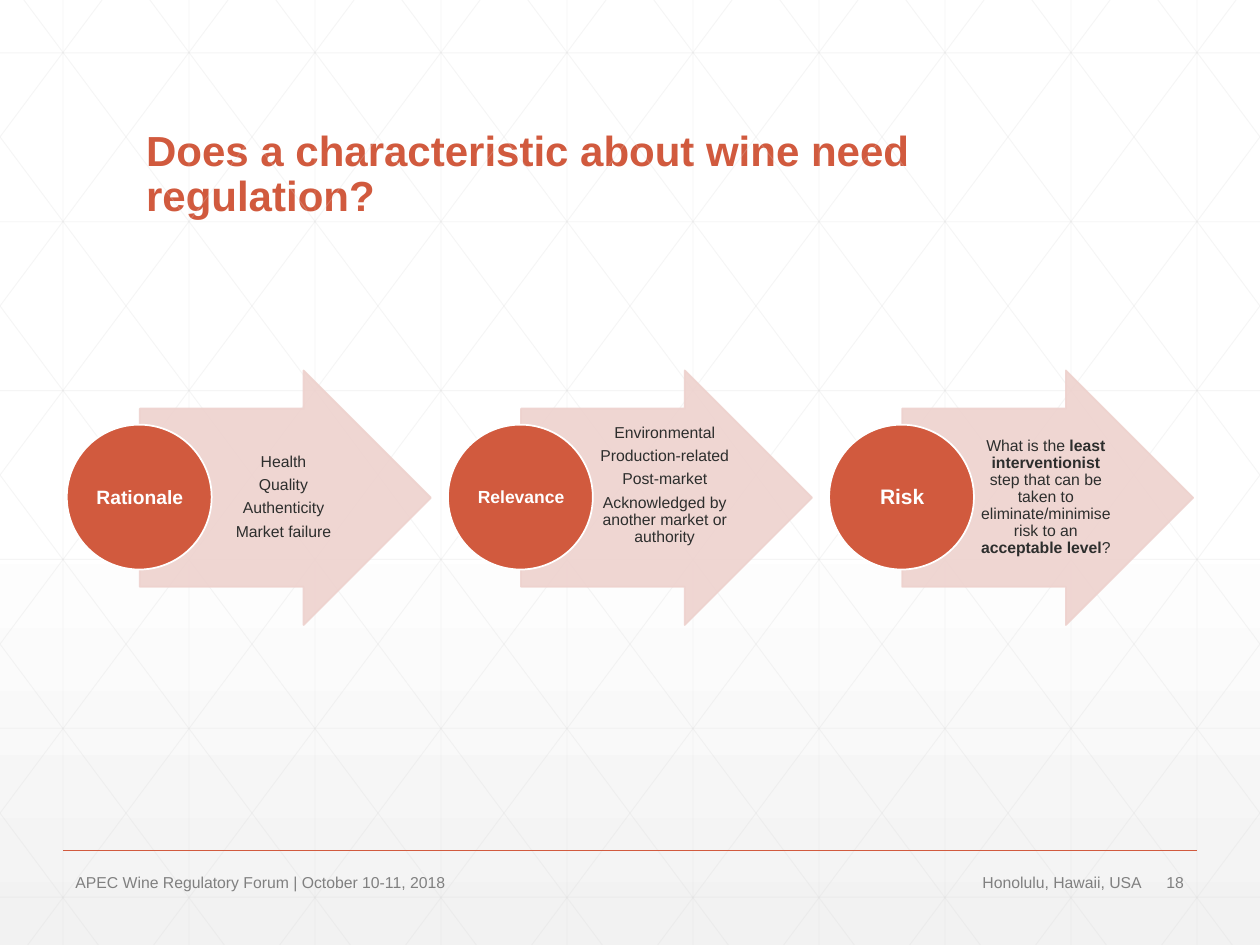
from lxml import etree
from pptx import Presentation
from pptx.dml.color import RGBColor
from pptx.enum.shapes import MSO_CONNECTOR, MSO_SHAPE
from pptx.enum.text import MSO_ANCHOR, MSO_AUTO_SIZE, PP_ALIGN
from pptx.oxml.ns import qn
from pptx.util import Inches, Pt

LEFT, CENTER, RIGHT = PP_ALIGN.LEFT, PP_ALIGN.CENTER, PP_ALIGN.RIGHT
MIDDLE, BOTTOM = MSO_ANCHOR.MIDDLE, MSO_ANCHOR.BOTTOM
ARROW, CIRCLE = MSO_SHAPE.RIGHT_ARROW, MSO_SHAPE.OVAL
STRAIGHT = MSO_CONNECTOR.STRAIGHT
NO_AUTOFIT = MSO_AUTO_SIZE.NONE

RUST = RGBColor(0xD1, 0x5A, 0x3E)
BLUSH = RGBColor(0xEE, 0xD2, 0xCE)
WHITE = RGBColor(0xFF, 0xFF, 0xFF)
PALE = RGBColor(0xF2, 0xF2, 0xF2)
GRID = RGBColor(0xD9, 0xD9, 0xD9)
INK = RGBColor(0x2D, 0x2E, 0x2D)
GREY = RGBColor(0x80, 0x80, 0x80)

WIDTH, HEIGHT = 10, 7.5
DIAGONAL_RUN = 5.59
STEP_PITCH = 3.025

STEPS = [
    ("Rationale", 11, 0.01, [
        [("Health", False)],
        [("Quality", False)],
        [("Authenticity", False)],
        [("Market failure", False)],
    ]),
    ("Relevance", 10, 0.2, [
        [("Environmental", False)],
        [("Production-related", False)],
        [("Post-market", False)],
        [("Acknowledged by another market or authority", False)],
    ]),
    ("Risk", 12, 0.01, [
        [("What is the ", False), ("least interventionist ", True),
         ("step that can be taken to eliminate/minimise risk to an ", False),
         ("acceptable level", True), ("?", False)],
    ]),
]


class SlideBuilder:
    font = "Arial"

    def __init__(self, page):
        self.page = page

    def background(self):
        fill = self.page.background.fill
        fill.gradient()
        fill.gradient_angle = 270
        for stop, position, color in zip(fill.gradient_stops, (0.53, 1), (WHITE, PALE)):
            stop.position = position
            stop.color.rgb = color

    def opacity(self, shape, percent):
        for color in shape._element.spPr.iter(qn("a:srgbClr")):
            etree.SubElement(color, qn("a:alpha"), val=str(percent * 1000))

    def line(self, x1, y1, x2, y2, color, width, opacity=100):
        line = self.page.shapes.add_connector(
            STRAIGHT, Inches(x1), Inches(y1), Inches(x2), Inches(y2))
        line.line.color.rgb = color
        line.line.width = Pt(width)
        etree.SubElement(line._element.spPr, qn("a:effectLst"))
        if opacity < 100:
            self.opacity(line, opacity)

    def shape(self, kind, x, y, width, height, fill, outline):
        shape = self.page.shapes.add_shape(
            kind, Inches(x), Inches(y), Inches(width), Inches(height))
        shape.shadow.inherit = False
        shape.fill.solid()
        shape.fill.fore_color.rgb = fill
        shape.line.color.rgb = outline
        shape.line.width = Pt(1)
        return shape

    def add_text(self, frame, paragraphs, size, color, align, spacing=None, after=0):
        for index, spans in enumerate(paragraphs):
            para = frame.add_paragraph() if index else frame.paragraphs[0]
            para.alignment = align
            para.line_spacing = spacing
            para.space_after = Pt(after)
            for words, bold in spans:
                span = para.add_run()
                span.text = words
                span.font.name = self.font
                span.font.size = Pt(size)
                span.font.bold = bold
                span.font.color.rgb = color

    def text(self, x, y, width, height, paragraphs, size, color, align,
             insets=(0.1, 0.05, 0.1, 0.05), spacing=None, after=0):
        box = self.page.shapes.add_textbox(
            Inches(x), Inches(y), Inches(width), Inches(height))
        frame = box.text_frame
        frame.word_wrap = True
        frame.vertical_anchor = MIDDLE
        (frame.margin_left, frame.margin_top,
         frame.margin_right, frame.margin_bottom) = map(Inches, insets)
        self.add_text(frame, paragraphs, size, color, align, spacing, after)

    def title(self, words):
        box = self.page.shapes.title
        box.left, box.top = Inches(1.06), Inches(0.55)
        box.width, box.height = Inches(7.88), Inches(1.25)
        box.text_frame.auto_size = NO_AUTOFIT
        box.text_frame.word_wrap = True
        box.text_frame.vertical_anchor = BOTTOM
        self.add_text(box.text_frame, [[(words, True)]], 24, RUST, LEFT, 0.9)

    def grid_line(self, x1, y1, x2, y2):
        self.line(x1, y1, x2, y2, GRID, 0.5, 25)

    def grid(self):
        for column in range(10):
            self.grid_line(column + 0.5, 0, column + 0.5, HEIGHT)
        for row in range(6):
            y = 0.42 + 1.34 * row
            self.grid_line(0, y, WIDTH, y)
        slope = HEIGHT / DIAGONAL_RUN
        for offset in range(-5, 10):
            top = offset + 0.19
            x1, x2 = max(top, 0), min(top + DIAGONAL_RUN, WIDTH)
            y1, y2 = (x1 - top) * slope, (x2 - top) * slope
            self.grid_line(x1, y1, x2, y2)
            self.grid_line(WIDTH - x1, y1, WIDTH - x2, y2)

    def step(self, x, heading, heading_size, bottom_inset, details):
        arrow = self.shape(ARROW, x + 0.58, 2.94, 2.31, 2.02, BLUSH, BLUSH)
        arrow.adjustments[0] = 0.7
        arrow.adjustments[1] = 0.5
        self.opacity(arrow, 90)
        self.text(x + 1.15, 3.24, 1.12, 1.41, details, 9, INK, CENTER,
                  (0.03, 0.01, 0.01, bottom_inset), 0.9, 3.6)
        self.shape(CIRCLE, x, 3.37, 1.15, 1.15, RUST, WHITE)
        self.text(x + 0.17, 3.54, 0.82, 0.82, [[(heading, True)]], heading_size,
                  WHITE, CENTER, (0.01, 0.01, 0.01, 0.01), 0.9)

    def footer(self, x, width, words, align):
        self.text(x, 6.88, width, 0.24, [[(words, False)]], 9, GREY, align)


def main():
    deck = Presentation()
    deck.slide_width, deck.slide_height = Inches(WIDTH), Inches(HEIGHT)
    builder = SlideBuilder(deck.slides.add_slide(deck.slide_layouts[5]))
    builder.background()
    builder.grid()
    builder.line(0.5, 6.75, 9.5, 6.75, RUST, 1)
    builder.title("Does a characteristic about wine need regulation?")
    for index, step in enumerate(STEPS):
        builder.step(0.53 + STEP_PITCH * index, *step)
    builder.footer(9.16, 0.34, "18", LEFT)
    builder.footer(0.5, 5.03, "APEC Wine Regulatory Forum | October 10-11, 2018", LEFT)
    builder.footer(5.58, 3.58, "Honolulu, Hawaii, USA", RIGHT)
    deck.save("out.pptx")


if __name__ == "__main__":
    main()
